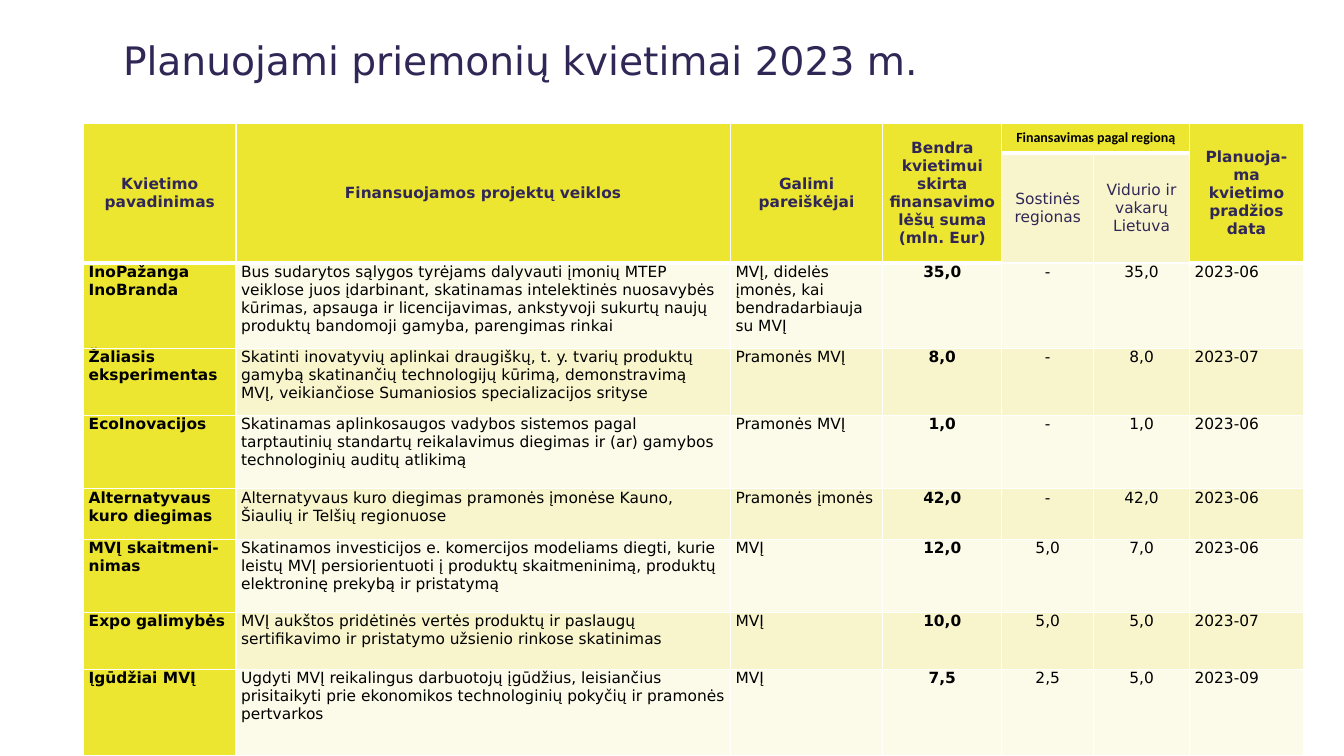
from collections import namedtuple
from dataclasses import dataclass

from lxml.etree import SubElement
from pptx import Presentation
from pptx.dml.color import RGBColor as Color
from pptx.enum.text import MSO_ANCHOR as Anchor, PP_ALIGN as Align
from pptx.oxml.ns import qn
from pptx.util import Inches, Pt

Box = namedtuple("Box", "left top width height")


@dataclass(frozen=True)
class Theme:
    ink: str = "302757"
    text: str = "000000"
    accent: str = "EDE630"
    light: str = "FCFAE8"
    band: str = "F8F5CD"
    rule: str = "FFFFFF"
    font: str = "DejaVu Sans"
    region_font: str = "Calibri"
    title_size: int = 28
    cell_size: int = 11
    region_size: int = 10
    thin: int = 1
    thick: int = 3


THEME = Theme()
TITLE = "Planuojami priemonių kvietimai 2023 m."
COLUMNS = [1.51, 4.9, 1.51, 1.18, 0.91, 0.95, 1.13]
ROWS = [0.3, 1.09, 0.85, 0.66, 0.73, 0.5, 0.73, 0.56, 0.86]
TALL_HEADS = {
    0: "Kvietimo pavadinimas",
    1: "Finansuojamos projektų veiklos",
    2: "Galimi pareiškėjai",
    3: "Bendra kvietimui skirta finansavimo lėšų suma (mln. Eur)",
    6: "Planuoja-ma kvietimo pradžios data",
}
REGION_HEAD = "Finansavimas pagal regioną"
REGIONS = {4: "Sostinės regionas", 5: "Vidurio ir vakarų Lietuva"}
CENTRED = (3, 4, 5)
BOLD = (0, 3)
CALLS = [
    ("InoPažanga\nInoBranda",
     "Bus sudarytos sąlygos tyrėjams dalyvauti įmonių MTEP veiklose juos įdarbinant, "
     "skatinamas intelektinės nuosavybės kūrimas, apsauga ir licencijavimas, ankstyvoji "
     "sukurtų naujų produktų bandomoji gamyba, parengimas rinkai",
     "MVĮ, didelės įmonės, kai bendradarbiauja su MVĮ", "35,0", "-", "35,0", "2023-06"),
    ("Žaliasis eksperimentas",
     "Skatinti inovatyvių aplinkai draugiškų, t. y. tvarių produktų gamybą skatinančių "
     "technologijų kūrimą, demonstravimą MVĮ, veikiančiose Sumaniosios specializacijos srityse",
     "Pramonės MVĮ", "8,0", "-", "8,0", "2023-07"),
    ("EcoInovacijos",
     "Skatinamas aplinkosaugos vadybos sistemos pagal tarptautinių standartų reikalavimus "
     "diegimas ir (ar) gamybos technologinių auditų atlikimą",
     "Pramonės MVĮ", "1,0", "-", "1,0", "2023-06"),
    ("Alternatyvaus kuro diegimas",
     "Alternatyvaus kuro diegimas pramonės įmonėse Kauno, Šiaulių ir Telšių regionuose",
     "Pramonės įmonės", "42,0", "-", "42,0", "2023-06"),
    ("MVĮ skaitmeni-nimas",
     "Skatinamos investicijos e. komercijos modeliams diegti, kurie leistų MVĮ "
     "persiorientuoti į produktų skaitmeninimą, produktų elektroninę prekybą ir pristatymą",
     "MVĮ", "12,0", "5,0", "7,0", "2023-06"),
    ("Expo galimybės",
     "MVĮ aukštos pridėtinės vertės produktų ir paslaugų sertifikavimo ir pristatymo "
     "užsienio rinkose skatinimas",
     "MVĮ", "10,0", "5,0", "5,0", "2023-07"),
    ("Įgūdžiai MVĮ",
     "Ugdyti MVĮ reikalingus darbuotojų įgūdžius, leisiančius prisitaikyti prie "
     "ekonomikos technologinių pokyčių ir pramonės pertvarkos",
     "MVĮ", "7,5", "2,5", "5,0", "2023-09"),
]


def add_span(para, text, size, color, bold=False, font=THEME.font):
    span = para.add_run()
    span.text = text
    span.font.name = font
    span.font.size = Pt(size)
    span.font.bold = bold
    span.font.color.rgb = Color.from_string(color)


def draw_borders(cell, bottom):
    properties = cell._tc.get_or_add_tcPr()
    widths = {"lnL": THEME.thin, "lnR": THEME.thin, "lnT": THEME.thin, "lnB": bottom}
    for position, (side, width) in enumerate(widths.items()):
        line = SubElement(properties, qn(f"a:{side}"), w=str(Pt(width)))
        fill = SubElement(line, qn("a:solidFill"))
        SubElement(fill, qn("a:srgbClr"), val=THEME.rule)
        properties.insert(position, line)


def fill_cell(cell, text, fill, color=THEME.text, size=THEME.cell_size, bold=False,
              font=THEME.font, align=Align.LEFT, anchor=Anchor.TOP, bottom=THEME.thin):
    cell.margin_left = cell.margin_right = Inches(0.05)
    cell.margin_top = cell.margin_bottom = 0
    cell.vertical_anchor = anchor
    cell.fill.solid()
    cell.fill.fore_color.rgb = Color.from_string(fill)
    draw_borders(cell, bottom)
    frame = cell.text_frame
    for index, line in enumerate(text.split("\n")):
        para = frame.add_paragraph() if index else frame.paragraphs[0]
        para.alignment = align
        add_span(para, line, size, color, bold, font)


def add_title(page, box):
    title = page.shapes.title
    title.left, title.top, title.width, title.height = box
    title.text_frame.vertical_anchor = Anchor.MIDDLE
    para = title.text_frame.paragraphs[0]
    para.alignment = Align.LEFT
    add_span(para, TITLE, THEME.title_size, THEME.ink)


def fill_header(table):
    middle = {"align": Align.CENTER, "anchor": Anchor.MIDDLE}
    head = {**middle, "fill": THEME.accent, "bold": True, "bottom": THEME.thick}
    for column, text in TALL_HEADS.items():
        table.cell(0, column).merge(table.cell(1, column))
        fill_cell(table.cell(0, column), text, color=THEME.ink, **head)
    table.cell(0, min(REGIONS)).merge(table.cell(0, max(REGIONS)))
    fill_cell(table.cell(0, min(REGIONS)), REGION_HEAD, size=THEME.region_size,
              font=THEME.region_font, **head)
    for column, text in REGIONS.items():
        fill_cell(table.cell(1, column), text, THEME.band, THEME.ink, **middle)


def fill_calls(table):
    for index, call in enumerate(CALLS):
        stripe = THEME.band if index % 2 else THEME.light
        for column, text in enumerate(call):
            fill_cell(table.cell(index + 2, column), text,
                      THEME.accent if column == 0 else stripe,
                      bold=column in BOLD,
                      align=Align.CENTER if column in CENTRED else Align.LEFT)


def add_calls_table(page, box):
    table = page.shapes.add_table(len(ROWS), len(COLUMNS), *box).table
    for column, share in zip(table.columns, COLUMNS):
        column.width = int(box.width * share / sum(COLUMNS))
    for row, share in zip(table.rows, ROWS):
        row.height = int(box.height * share / sum(ROWS))
    fill_header(table)
    fill_calls(table)


def main():
    deck = Presentation()
    deck.slide_width, deck.slide_height = Inches(13.33), Inches(7.5)
    page = deck.slides.add_slide(deck.slide_layouts[5])
    add_calls_table(page, Box(Inches(0.83), Inches(1.22), Inches(12.1), Inches(6.28)))
    add_title(page, Box(Inches(1.12), Inches(0.31), Inches(11.55), Inches(0.57)))
    deck.save("out.pptx")


if __name__ == "__main__":
    main()
